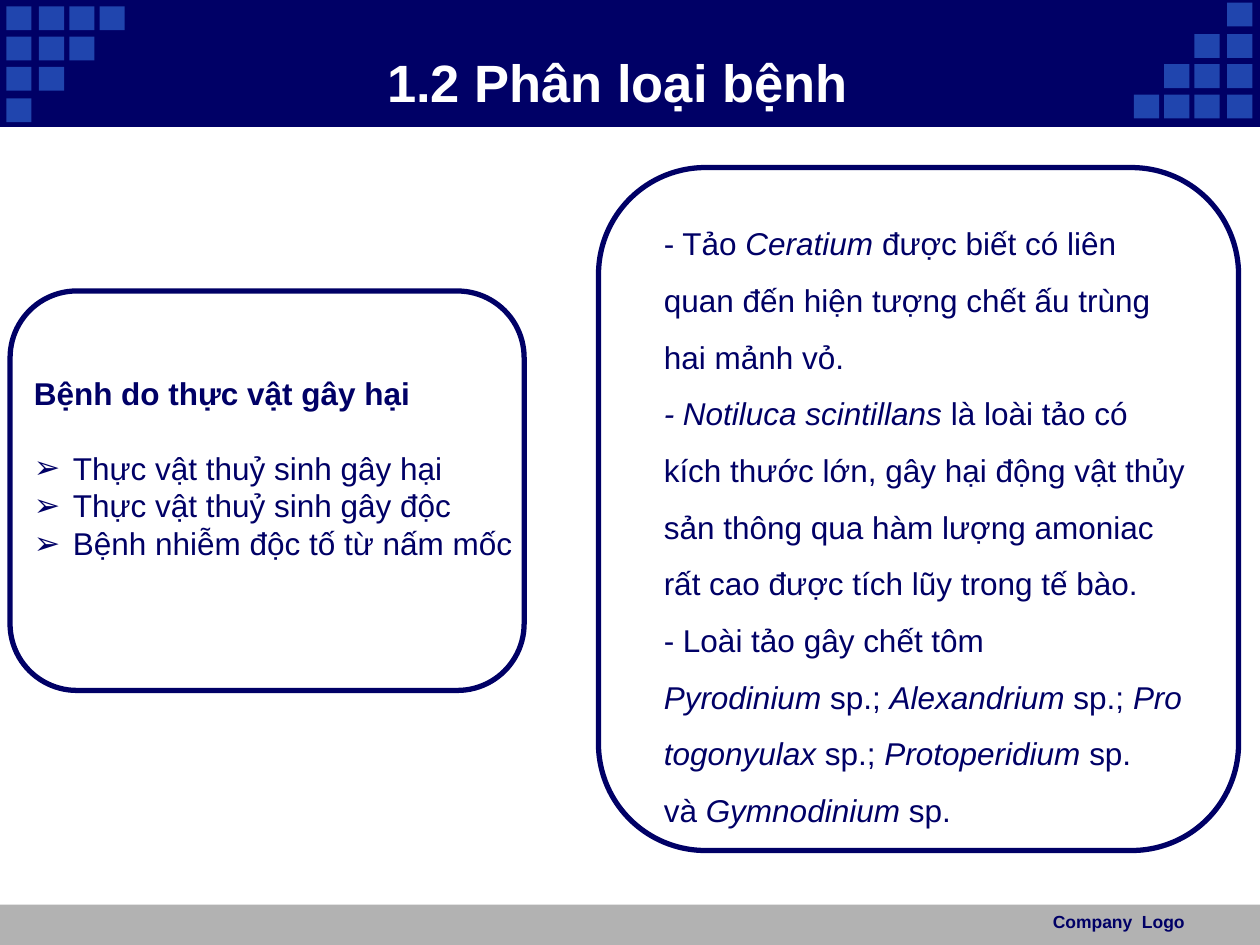
from dataclasses import dataclass

from lxml import etree
from pptx import Presentation
from pptx.dml.color import RGBColor
from pptx.enum.shapes import MSO_SHAPE
from pptx.enum.text import MSO_ANCHOR, PP_ALIGN
from pptx.oxml.ns import qn
from pptx.util import Pt

RECT, ROUND = MSO_SHAPE.RECTANGLE, MSO_SHAPE.ROUNDED_RECTANGLE
TOP, MIDDLE = MSO_ANCHOR.TOP, MSO_ANCHOR.MIDDLE
LEFT, CENTER, RIGHT = PP_ALIGN.LEFT, PP_ALIGN.CENTER, PP_ALIGN.RIGHT
PX = 9144  # EMU per px, 100 px to the inch


@dataclass
class Theme:
    font: str = "Arial"
    navy: RGBColor = RGBColor(0x00, 0x00, 0x66)
    blue: RGBColor = RGBColor(0x20, 0x45, 0xAE)
    gray: RGBColor = RGBColor(0xB2, 0xB2, 0xB2)
    white: RGBColor = RGBColor(0xFF, 0xFF, 0xFF)
    title: int = 30
    body: int = 18
    small: int = 10


theme = Theme()
deck = Presentation()
deck.slide_width, deck.slide_height = 1000 * PX, 750 * PX
slide = deck.slides.add_slide(deck.slide_layouts[6])


def add_box(kind, box, fill=None, line=None, width=1):
    shape = slide.shapes.add_shape(kind, *[n * PX for n in box])
    shape.shadow.inherit = False
    if fill is None:
        shape.fill.background()
    else:
        shape.fill.solid()
        shape.fill.fore_color.rgb = fill
    if line is None:
        shape.line.fill.background()
    else:
        shape.line.color.rgb = line
        shape.line.width = Pt(width)
    return shape


def add_text(box, text, size=theme.body, color=theme.navy, bold=False,
             align=LEFT, anchor=TOP, space=None):
    """One paragraph per line; *marks* set italics and ~ is a no-break space."""
    frame = slide.shapes.add_textbox(*[n * PX for n in box]).text_frame
    frame.word_wrap = True
    frame.vertical_anchor = anchor
    for i, row in enumerate(text.split("\n")):
        para = frame.paragraphs[0] if i == 0 else frame.add_paragraph()
        para.alignment = align
        para.line_spacing = space
        for j, part in enumerate(row.replace("~", chr(160)).split("*")):
            if part:
                run = para.add_run()
                run.text = part
                font = run.font
                font.name, font.size, font.bold = theme.font, Pt(size), bold
                font.italic = j % 2 == 1
                font.color.rgb = color
    return frame


# Footer and header bands
add_box(RECT, (0, 718, 1000, 33), theme.gray)
add_box(RECT, (0, 0, 1000, 100), theme.navy, theme.navy, 0.75)

# Corner tiles: a stair on the left, turned half round on the right
cols, rows = (5, 31, 55, 79), (5, 29, 53, 78)
for i, y in enumerate(rows):
    for x in cols[:4 - i]:
        add_box(RECT, (x, y, 20, 19), theme.blue)
        add_box(RECT, (979 - x, 80 - y, 20, 19), theme.blue)

# Footer label and title
add_text((783, 718, 167, 32), "Company  Logo", size=theme.small, bold=True,
         align=RIGHT)
add_text((92, 34, 808, 62), "1.2 Phân loại bệnh ", size=theme.title,
         color=theme.white, bold=True, align=CENTER, anchor=MIDDLE)

# Rounded frames
for box in ((475, 133, 508, 542), (8, 231, 408, 317)):
    add_box(ROUND, box, line=theme.navy, width=3).adjustments[0] = 0.167

# Left panel: heading and arrow bullets
left = add_text((17, 292, 408, 162), """Bệnh do thực vật gây hại
Thực vật thuỷ sinh gây hại
Thực vật thuỷ sinh gây độc
Bệnh nhiễm độc tố từ nấm mốc""")
head, *items = left.paragraphs
head.runs[0].font.bold = True
head.space_after = Pt(21)
for item in items:
    props = item._p.get_or_add_pPr()
    props.set("marL", str(31 * PX))
    props.set("indent", str(-31 * PX))
    etree.SubElement(props, qn("a:buFont")).set("typeface", theme.font)
    etree.SubElement(props, qn("a:buChar")).set("char", "➢")

# Right panel: harmful algae
add_text((517, 158, 434, 510), """\
- Tảo~*Ceratium~*được biết có liên quan đến hiện tượng chết ấu trùng hai mảnh vỏ.~
*- Notiluca scintillans*~là loài tảo có kích thước lớn, gây hại động vật thủy sản \
thông qua hàm lượng amoniac rất cao được tích lũy trong tế bào.
- Loài~tảo gây chết tôm *Pyrodinium~*sp.;~*Alexandrium~*sp.;~*Protogonyulax~*sp.;~\
*Protoperidium~*sp. và~*Gymnodinium~*sp.""", space=1.5)

deck.save("out.pptx")
